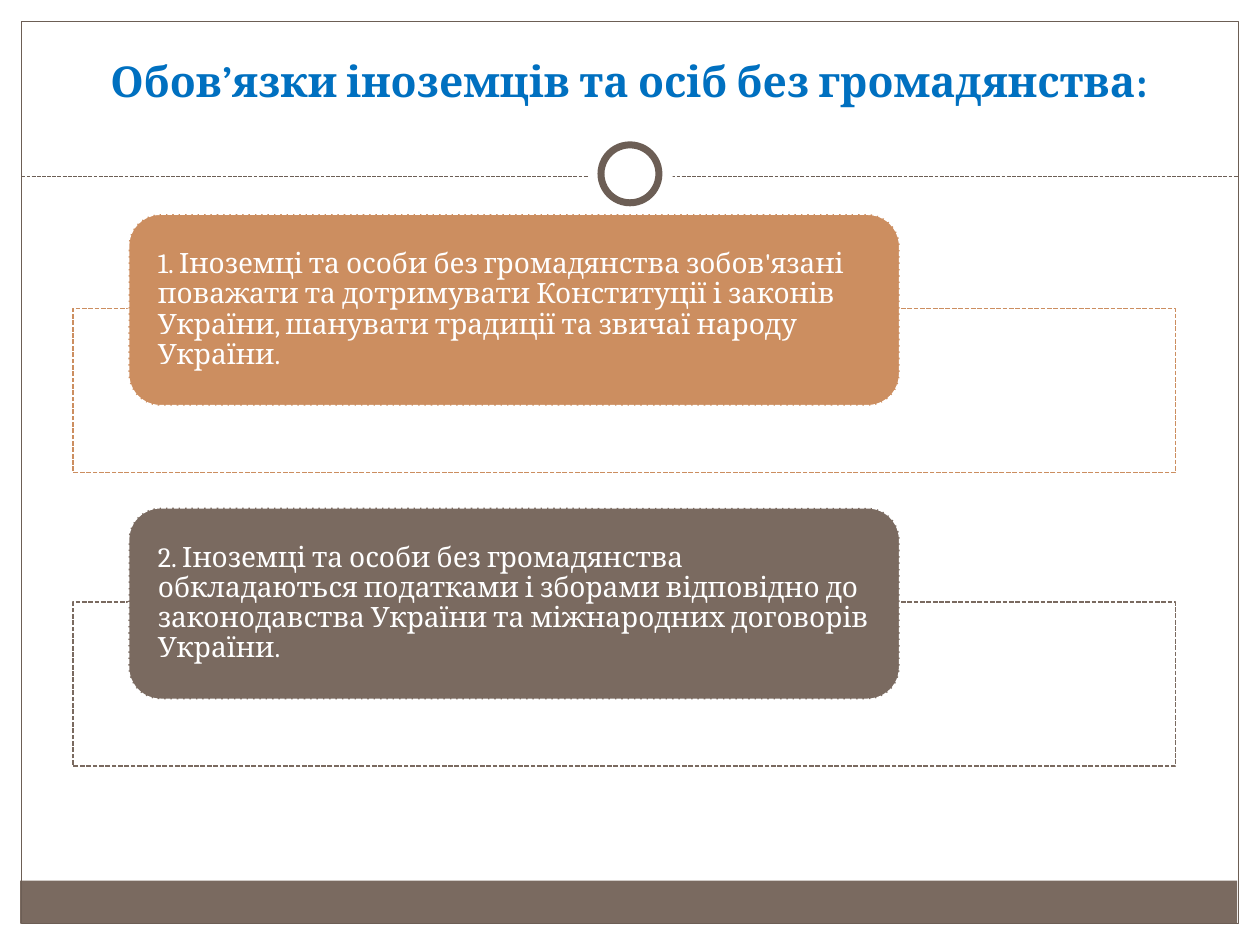
from dataclasses import dataclass
from typing import Any, Optional

import pptx
import pptx.dml.color
import pptx.enum.dml
import pptx.enum.shapes
import pptx.enum.text
import pptx.oxml.ns
import pptx.util
from lxml import etree

Inches = pptx.util.Inches
Pt = pptx.util.Pt
ShapeType = pptx.enum.shapes.MSO_SHAPE
Anchor = pptx.enum.text.MSO_ANCHOR
Align = pptx.enum.text.PP_ALIGN
DASH = pptx.enum.dml.MSO_LINE.SQUARE_DOT

FONT = "Cambria"
COLOURS = {
    "white": "FFFFFF",
    "brown": "7A6A60",
    "dark_brown": "6C5E55",
    "orange": "CC8E60",
    "blue": "0070C0",
}


@dataclass(frozen=True)
class Box:
    left: float
    top: float
    width: float
    height: float

    def lengths(self) -> list[int]:
        return [Inches(value) for value in (self.left, self.top, self.width, self.height)]


@dataclass(frozen=True)
class Stroke:
    colour: str
    width: float
    dash: Any = None


@dataclass(frozen=True)
class Duty:
    text: str
    colour: str


DUTIES = [
    Duty("1. Іноземці та особи без громадянства зобов'язані поважати та дотримувати "
         "Конституції і законів України, шанувати традиції та звичаї народу України.", "orange"),
    Duty("2. Іноземці та особи без громадянства обкладаються податками і зборами відповідно "
         "до законодавства України та міжнародних договорів України.", "brown"),
]
FIRST_DUTY_TOP = 1.7
DUTY_STEP = 2.33
FRAME_OFFSET = 0.75


def colour_of(name: str) -> pptx.dml.color.RGBColor:
    return pptx.dml.color.RGBColor.from_string(COLOURS[name])


def set_attributes(target: Any, values: dict[str, Any]) -> None:
    for name, value in values.items():
        setattr(target, name, value)


def format_line(line: Any, stroke: Stroke) -> None:
    line.color.rgb = colour_of(stroke.colour)
    set_attributes(line, {"width": Pt(stroke.width), "dash_style": stroke.dash})


def add_shape(slide: Any, kind: Any, box: Box, fill: Optional[str] = None,
              stroke: Optional[Stroke] = None) -> Any:
    shape = slide.shapes.add_shape(kind, *box.lengths())
    shape.shadow.inherit = False
    if fill:
        shape.fill.solid()
        shape.fill.fore_color.rgb = colour_of(fill)
    else:
        shape.fill.background()
    if stroke:
        format_line(shape.line, stroke)
    else:
        shape.line.fill.background()
    return shape


def write_text(shape: Any, text: str, colour: str, frame_values: dict[str, Any],
               paragraph_values: dict[str, Any], font_values: dict[str, Any]) -> None:
    set_attributes(shape.text_frame, {"word_wrap": True, **frame_values})
    paragraph = shape.text_frame.paragraphs[0]
    set_attributes(paragraph, paragraph_values)
    run = paragraph.add_run()
    run.text = text
    set_attributes(run.font, {"name": FONT, **font_values})
    run.font.color.rgb = colour_of(colour)


def add_divider(slide: Any, left: float, right: float, top: float, stroke: Stroke) -> None:
    connector = slide.shapes.add_connector(
        pptx.enum.shapes.MSO_CONNECTOR.STRAIGHT,
        Inches(left), Inches(top), Inches(right), Inches(top))
    format_line(connector.line, stroke)
    etree.SubElement(connector._element.spPr, pptx.oxml.ns.qn("a:effectLst"))


def add_duty(slide: Any, duty: Duty, top: float) -> None:
    add_shape(slide, ShapeType.RECTANGLE, Box(0.58, top + FRAME_OFFSET, 8.75, 1.3),
              "white", Stroke(duty.colour, 0.9, DASH))
    card = add_shape(slide, ShapeType.ROUNDED_RECTANGLE, Box(1.02, top, 6.12, 1.52),
                     duty.colour, Stroke("white", 0.9, DASH))
    write_text(
        card, duty.text, "white",
        {"vertical_anchor": Anchor.MIDDLE, "margin_left": Inches(0.16),
         "margin_right": Inches(0.16), "margin_top": 0, "margin_bottom": 0},
        {"alignment": Align.LEFT, "line_spacing": 0.9},
        {"size": Pt(16)})


def main() -> None:
    presentation = pptx.Presentation()
    set_attributes(presentation, {"slide_width": Inches(10), "slide_height": Inches(7.5)})
    slide = presentation.slides.add_slide(presentation.slide_layouts[6])

    add_shape(slide, ShapeType.RECTANGLE, Box(0.16, 6.99, 9.66, 0.34), "brown")
    add_shape(slide, ShapeType.RECTANGLE, Box(0.17, 0.17, 9.66, 7.16),
              stroke=Stroke("dark_brown", 0.75))
    add_divider(slide, 0.17, 9.83, 1.4, Stroke("dark_brown", 0.75, DASH))
    add_shape(slide, ShapeType.OVAL, Box(4.67, 1.05, 0.67, 0.67), "white")
    add_shape(slide, ShapeType.OVAL, Box(4.77, 1.15, 0.46, 0.46), "white",
              Stroke("dark_brown", 4))

    title = slide.shapes.add_textbox(*Box(0.33, 0.25, 9.33, 1.08).lengths())
    write_text(
        title, "Обов’язки іноземців та осіб без громадянства:", "blue",
        {"vertical_anchor": Anchor.BOTTOM, "margin_bottom": Inches(0.49)},
        {"alignment": Align.CENTER},
        {"size": Pt(24.3), "bold": True})

    for index, duty in enumerate(DUTIES):
        add_duty(slide, duty, FIRST_DUTY_TOP + index * DUTY_STEP)

    presentation.save("out.pptx")


if __name__ == "__main__":
    main()
